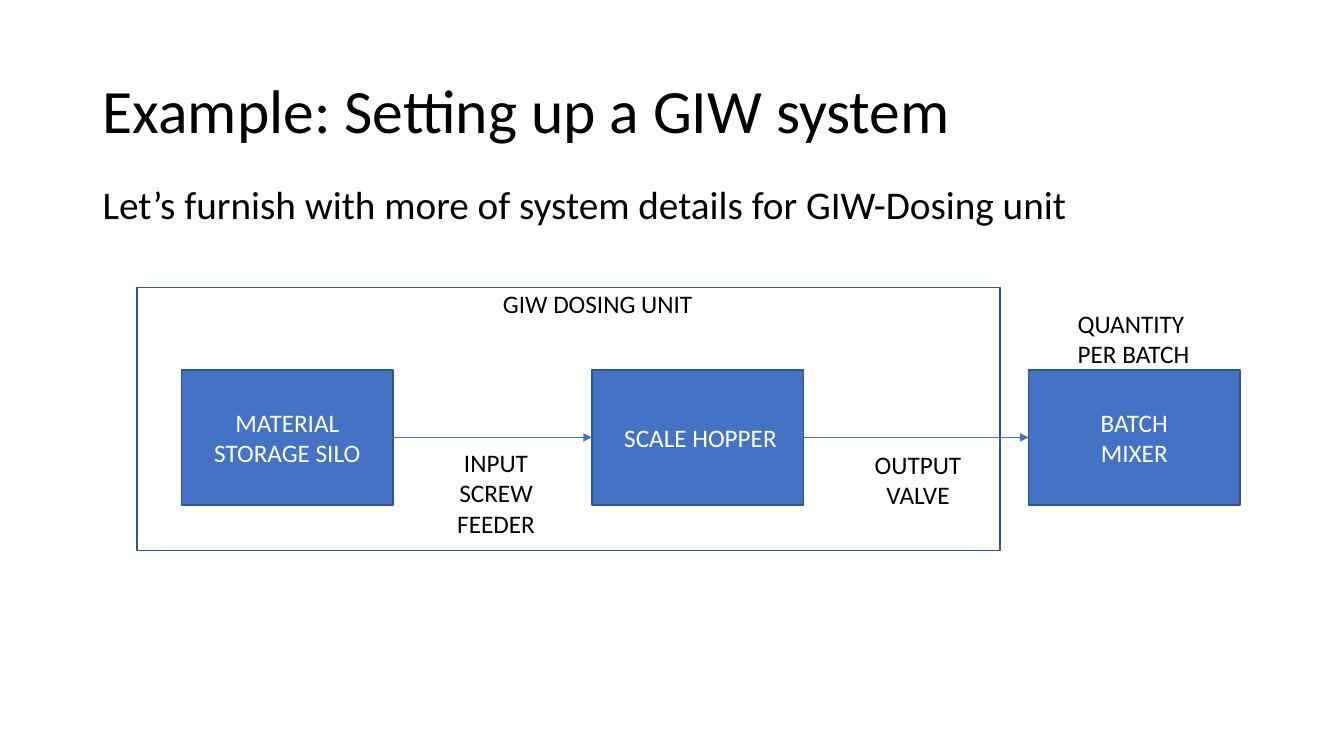
from lxml import etree
from pptx import Presentation
from pptx.dml.color import RGBColor
from pptx.enum.shapes import MSO_CONNECTOR as CONN, MSO_SHAPE as SHAPE
from pptx.enum.text import MSO_ANCHOR as ANCHOR, PP_ALIGN as ALIGN
from pptx.oxml.ns import qn
from pptx.util import Inches, Pt

BLUE = RGBColor(0x44, 0x72, 0xC4)
DARK_BLUE = RGBColor(0x32, 0x54, 0x91)
BLACK = RGBColor(0, 0, 0)
WHITE = RGBColor(255, 255, 255)

BOX_TOP, BOX_W, BOX_H = 3.67, 2.1, 1.34
FLOW_Y = BOX_TOP + BOX_H / 2


def write(s, text, size=18, color=BLACK, align=ALIGN.LEFT, anchor=ANCHOR.TOP):
    tf = s.text_frame
    tf.word_wrap = True
    tf.vertical_anchor = anchor
    tf.text = text
    for p in tf.paragraphs:
        p.alignment = align
        for r in p.runs:
            r.font.name = "Calibri"
            r.font.size = Pt(size)
            r.font.color.rgb = color
    return tf


def add_box(left, top, width, height):
    s = slide.shapes.add_shape(SHAPE.RECTANGLE, Inches(left), Inches(top),
                               Inches(width), Inches(height))
    s.shadow.inherit = False
    s.line.color.rgb = DARK_BLUE
    s.line.width = Pt(1)
    return s


prs = Presentation()
prs.slide_width = Inches(13.33)
prs.slide_height = Inches(7.5)
slide = prs.slides.add_slide(prs.slide_layouts[6])

# Heading
title = slide.shapes.add_textbox(Inches(0.92), Inches(0.4), Inches(11.5), Inches(1.45))
tf = write(title, "Example: Setting up a GIW system", 44, anchor=ANCHOR.MIDDLE)
tf.paragraphs[0].line_spacing = 0.9

subtitle = slide.shapes.add_textbox(Inches(0.92), Inches(1.74), Inches(11.1), Inches(0.57))
write(subtitle, "Let’s furnish with more of system details for GIW-Dosing unit", 28)

# Outline of the dosing unit
dosing_unit = add_box(1.36, 2.85, 8.56, 2.61)
dosing_unit.fill.background()

# Process stages
stages = [
    (1.8, "MATERIAL STORAGE SILO"),
    (5.87, " SCALE HOPPER"),
    (10.2, "BATCH\nMIXER"),
]
for left, text in stages:
    s = add_box(left, BOX_TOP, BOX_W, BOX_H)
    s.fill.solid()
    s.fill.fore_color.rgb = BLUE
    write(s, text, color=WHITE, align=ALIGN.CENTER, anchor=ANCHOR.MIDDLE)

# Arrows from each stage to the next
for (start, _), (end, _) in zip(stages, stages[1:]):
    arrow = slide.shapes.add_connector(CONN.STRAIGHT, Inches(start + BOX_W), Inches(FLOW_Y),
                                       Inches(end), Inches(FLOW_Y))
    arrow.line.color.rgb = BLUE
    arrow.line.width = Pt(0.5)
    etree.SubElement(arrow.line._get_or_add_ln(), qn("a:tailEnd"), type="triangle")
    etree.SubElement(arrow._element.spPr, qn("a:effectLst"))

# Labels
labels = [
    (4.89, 2.81, 2.37, 0.4, "GIW DOSING UNIT", ALIGN.LEFT),
    (10.59, 3.01, 1.43, 0.71, "QUANTITY PER BATCH", ALIGN.LEFT),
    (3.97, 4.39, 1.9, 1.01, "INPUT\nSCREW\nFEEDER", ALIGN.CENTER),
    (8.53, 4.41, 1.15, 0.71, "OUTPUT\nVALVE", ALIGN.CENTER),
]
for left, top, width, height, text, align in labels:
    s = slide.shapes.add_textbox(Inches(left), Inches(top), Inches(width), Inches(height))
    write(s, text, align=align)

prs.save("out.pptx")
